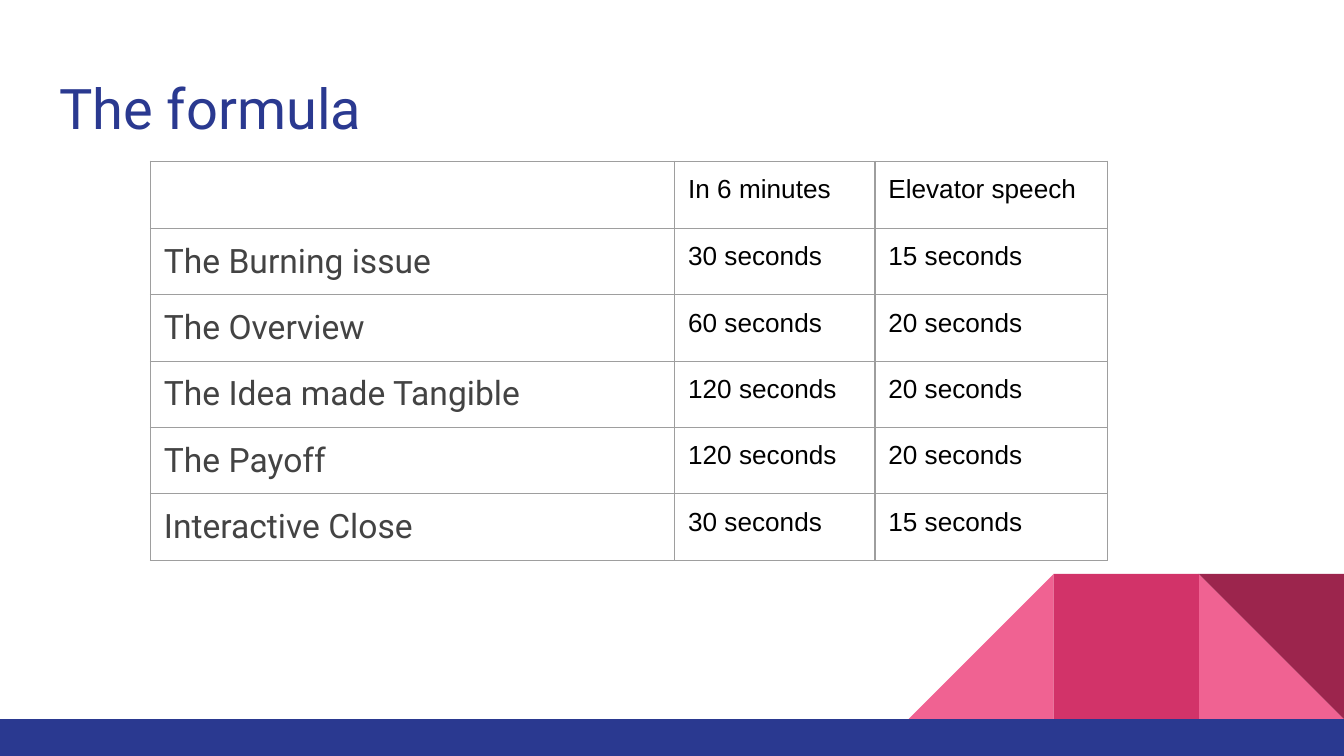
from lxml.etree import SubElement
from pptx import Presentation
from pptx.dml.color import RGBColor
from pptx.enum.shapes import MSO_SHAPE
from pptx.enum.text import MSO_ANCHOR, PP_ALIGN
from pptx.oxml.ns import qn
from pptx.util import Inches, Pt

TITLE = "The formula"
ROWS = [
    ("", "In 6 minutes", "Elevator speech"),
    ("The Burning issue", "30 seconds", "15 seconds"),
    ("The Overview", "60 seconds", "20 seconds"),
    ("The Idea made Tangible", "120 seconds", "20 seconds"),
    ("The Payoff", "120 seconds", "20 seconds"),
    ("Interactive Close", "30 seconds", "15 seconds"),
]
COL_WIDTHS = [3.9, 1.49, 1.73]
HEADER_H, ROW_H = 0.5, 0.42
BLUE, PINK, ROSE, WINE = "2A3990", "F06292", "D23369", "9C254D"
WIDTH = 10
HEIGHT = WIDTH * 9 / 16
BAND_TOP, TILE = 5.35, 1.08
TILES = [
    (1, MSO_SHAPE.RIGHT_TRIANGLE, 0, PINK),
    (3, MSO_SHAPE.RIGHT_TRIANGLE, 270, PINK),
    (2, MSO_SHAPE.RECTANGLE, 0, ROSE),
    (1, MSO_SHAPE.RIGHT_TRIANGLE, 180, WINE),
]


def rgb(color):
    return RGBColor.from_string(color)


def add_block(s, kind, left, top, width, height, color, rotation=0):
    sp = s.shapes.add_shape(kind, Inches(left), Inches(top), Inches(width), Inches(height))
    sp.rotation = rotation
    sp.fill.solid()
    sp.fill.fore_color.rgb = rgb(color)
    sp.line.fill.background()
    sp.shadow.inherit = False


def set_text(tf, text, size, font, color):
    tf.text = text
    p = tf.paragraphs[0]
    p.alignment = PP_ALIGN.LEFT
    p.font.size = Pt(size)
    p.font.name = font
    p.font.color.rgb = rgb(color)


def set_margins(target):
    target.margin_left = target.margin_right = Inches(0.1)
    target.margin_top = target.margin_bottom = Inches(0.1)
    target.vertical_anchor = MSO_ANCHOR.TOP


def set_borders(cell, color, width):
    tcPr = cell._tc.get_or_add_tcPr()
    for i, side in enumerate(("lnL", "lnR", "lnT", "lnB")):
        ln = SubElement(tcPr, qn(f"a:{side}"), w=str(Pt(width)))
        fill = SubElement(ln, qn("a:solidFill"))
        SubElement(fill, qn("a:srgbClr"), val=color)
        tcPr.insert(i, ln)


def add_formula_table(s):
    height = HEADER_H + ROW_H * (len(ROWS) - 1)
    table = s.shapes.add_table(len(ROWS), len(COL_WIDTHS), Inches(1.12), Inches(1.2),
                               Inches(sum(COL_WIDTHS)), Inches(height)).table
    table.first_row = table.horz_banding = False
    for column, width in zip(table.columns, COL_WIDTHS):
        column.width = Inches(width)
    for r, values in enumerate(ROWS):
        table.rows[r].height = Inches(ROW_H if r else HEADER_H)
        for c, value in enumerate(values):
            cell = table.cell(r, c)
            style = (14, "Arial", "000000") if c else (18, "Roboto", "434343")
            set_text(cell.text_frame, value, *style)
            set_margins(cell)
            cell.fill.background()
            set_borders(cell, "9E9E9E", 0.75)


def main():
    prs = Presentation()
    prs.slide_width, prs.slide_height = Inches(WIDTH), Inches(HEIGHT)
    s = prs.slides.add_slide(prs.slide_layouts[5])
    for from_right, kind, rotation, color in TILES:
        add_block(s, kind, WIDTH - from_right * TILE, BAND_TOP - TILE, TILE, TILE, color, rotation)
    add_block(s, MSO_SHAPE.RECTANGLE, 0, BAND_TOP, WIDTH, HEIGHT - BAND_TOP, BLUE)
    title = s.shapes.title
    title.left, title.top = Inches(0.34), Inches(0.45)
    title.width, title.height = Inches(9.32), Inches(0.66)
    set_text(title.text_frame, TITLE, 30, "Roboto", BLUE)
    set_margins(title.text_frame)
    add_formula_table(s)
    prs.save("out.pptx")


if __name__ == "__main__":
    main()
